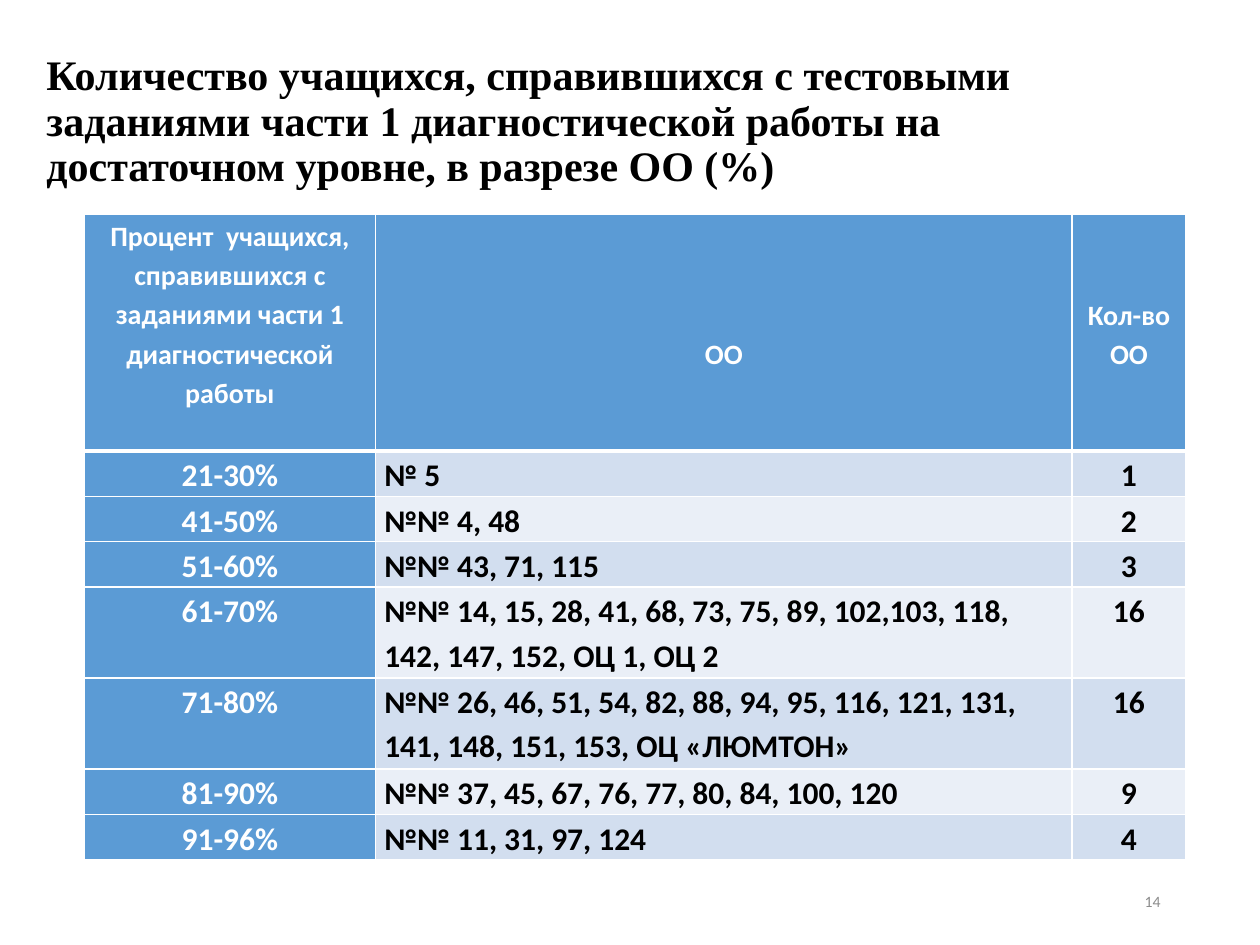
from lxml.etree import SubElement
from pptx import Presentation
from pptx.dml.color import RGBColor
from pptx.enum.text import MSO_ANCHOR as Anchor, PP_ALIGN as Align
from pptx.oxml.ns import qn
from pptx.util import Inches, Pt

COLOURS = {
    "header": "5B9BD5", "band_dark": "D2DEEF", "band_light": "EAEFF7",
    "white": "FFFFFF", "black": "000000", "page_number": "8C8C8C",
}
SLIDE_WIDTH, SLIDE_HEIGHT = Inches(10), Inches(7.5)

# Boxes are left, top, width, height as shares of the slide
TITLE_BOX = (0.027, 0.033, 0.862, 0.193)
TABLE_BOX = (0.067, 0.227, 0.874, 0.683)
NUMBER_BOX = (0.706, 0.927, 0.225, 0.053)

TITLE = ("Количество учащихся, справившихся с тестовыми заданиями части 1 "
         "диагностической работы на достаточном уровне, в разрезе ОО (%)")
HEADERS = (
    "Процент  учащихся, справившихся с заданиями части 1 диагностической работы",
    "ОО",
    "Кол-во ОО",
)
RESULTS = (
    ("21-30%", "№ 5", "1"),
    ("41-50%", "№№ 4, 48", "2"),
    ("51-60%", "№№ 43, 71, 115", "3"),
    ("61-70%", "№№ 14, 15, 28, 41, 68, 73, 75, 89, 102,103, 118, 142, 147, 152, "
     "ОЦ 1, ОЦ 2", "16"),
    ("71-80%", "№№ 26, 46, 51, 54, 82, 88, 94, 95, 116, 121, 131, 141, 148, 151, "
     "153, ОЦ «ЛЮМТОН»", "16"),
    ("81-90%", "№№ 37, 45, 67, 76, 77, 80, 84, 100, 120", "9"),
    ("91-96%", "№№ 11, 31, 97, 124", "4"),
)
COLUMN_WEIGHTS = (2.31, 5.53, 0.9)
ROW_WEIGHTS = (5.2, 1, 1, 1, 2, 2, 1, 1)  # in lines of body text


def to_slide(box):
    """Turn shares of the slide into lengths."""
    left, top, width, height = box
    return (int(left * SLIDE_WIDTH), int(top * SLIDE_HEIGHT),
            int(width * SLIDE_WIDTH), int(height * SLIDE_HEIGHT))


def write_text(text_frame, text, size, colour, font="Calibri", bold=True,
               align=Align.LEFT, spacing=1.0):
    text_frame.text = text
    paragraph = text_frame.paragraphs[0]
    paragraph.alignment = align
    paragraph.line_spacing = spacing
    run_font = paragraph.runs[0].font
    run_font.name, run_font.size, run_font.bold = font, Pt(size), bold
    run_font.color.rgb = RGBColor.from_string(COLOURS[colour])


def add_text(slide, box, text, size, colour, **style):
    text_frame = slide.shapes.add_textbox(*to_slide(box)).text_frame
    text_frame.word_wrap = True
    text_frame.vertical_anchor = Anchor.MIDDLE
    write_text(text_frame, text, size, colour, **style)


def set_borders(cell, bottom_width):
    properties = cell._tc.get_or_add_tcPr()
    widths = {"a:lnL": 1, "a:lnR": 1, "a:lnT": 1, "a:lnB": bottom_width}
    for position, (tag, width) in enumerate(widths.items()):
        line = SubElement(properties, qn(tag), w=str(Pt(width)))
        fill = SubElement(line, qn("a:solidFill"))
        SubElement(fill, qn("a:srgbClr"), val=COLOURS["white"])
        properties.insert(position, line)  # borders come before the fill


def fill_cell(cell, text, row, column):
    is_header = row == 0
    on_blue = is_header or column == 0
    band = "band_dark" if row % 2 else "band_light"
    cell.fill.solid()
    cell.fill.fore_color.rgb = RGBColor.from_string(
        COLOURS["header" if on_blue else band])
    cell.margin_left = cell.margin_right = Inches(0.07)
    cell.margin_top = cell.margin_bottom = 0
    cell.vertical_anchor = Anchor.MIDDLE if is_header and column else Anchor.TOP
    write_text(cell.text_frame, text, 16 if is_header else 18,
               "white" if on_blue else "black", spacing=1.15,
               align=Align.LEFT if column == 1 and not is_header else Align.CENTER)
    set_borders(cell, 3 if is_header else 1)


def add_results_table(slide, box):
    left, top, width, height = to_slide(box)
    rows = (HEADERS,) + RESULTS
    table = slide.shapes.add_table(len(rows), len(HEADERS),
                                   left, top, width, height).table
    for column, weight in zip(table.columns, COLUMN_WEIGHTS):
        column.width = int(width * weight / sum(COLUMN_WEIGHTS))
    for row, weight in zip(table.rows, ROW_WEIGHTS):
        row.height = int(height * weight / sum(ROW_WEIGHTS))
    for row, texts in enumerate(rows):
        for column, text in enumerate(texts):
            fill_cell(table.cell(row, column), text, row, column)
    table.cell(0, 1).margin_top = Inches(0.31)  # one line lower than the middle


def main():
    presentation = Presentation()
    presentation.slide_width, presentation.slide_height = SLIDE_WIDTH, SLIDE_HEIGHT
    slide = presentation.slides.add_slide(presentation.slide_layouts[6])
    add_text(slide, TITLE_BOX, TITLE, 24, "black",
             font="Times New Roman", spacing=0.9)
    add_text(slide, NUMBER_BOX, "14", 9, "page_number",
             bold=False, align=Align.RIGHT)
    add_results_table(slide, TABLE_BOX)
    presentation.save("out.pptx")


if __name__ == "__main__":
    main()
